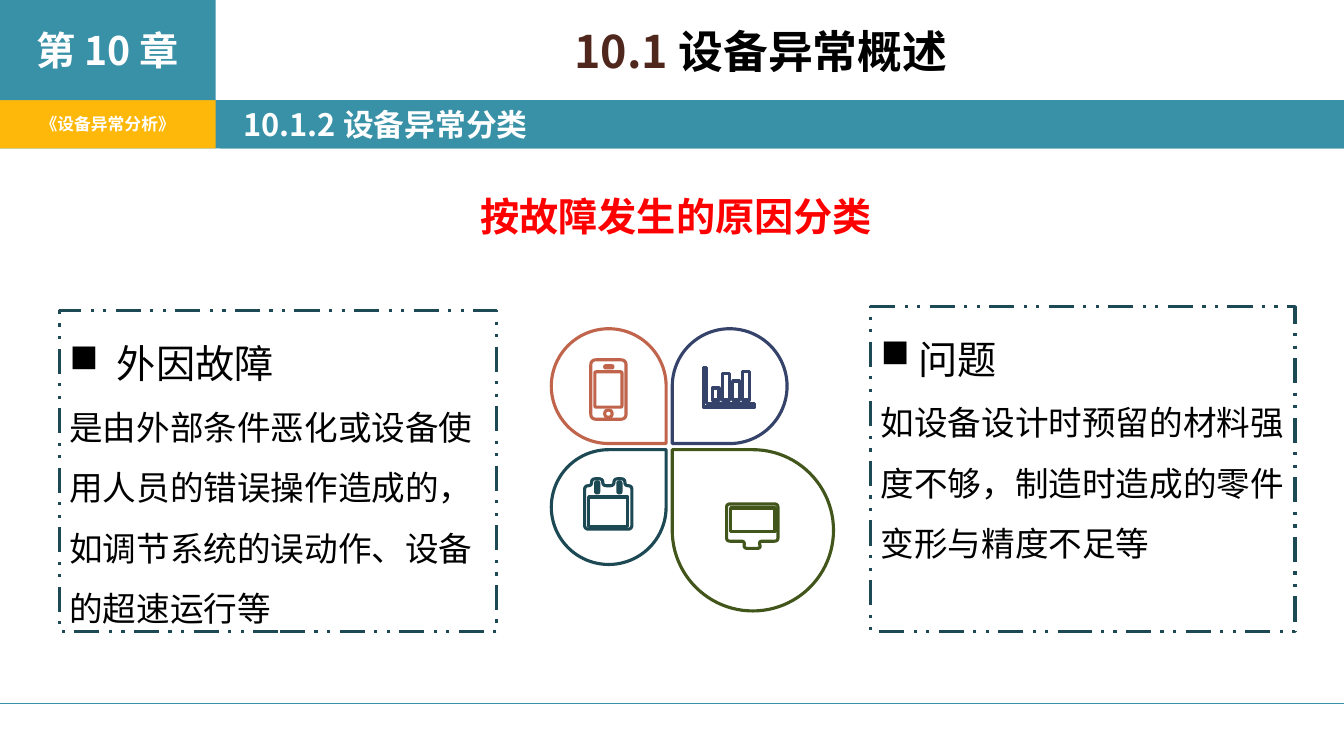
from pptx import Presentation
from pptx.dml.color import RGBColor
from pptx.enum.dml import MSO_LINE
from pptx.enum.shapes import MSO_CONNECTOR, MSO_SHAPE
from pptx.enum.text import MSO_ANCHOR, PP_ALIGN
from pptx.oxml.ns import qn
from pptx.util import Pt
from lxml import etree

RECT, TEARDROP = MSO_SHAPE.RECTANGLE, MSO_SHAPE.TEAR
STRAIGHT = MSO_CONNECTOR.STRAIGHT
DASH = MSO_LINE.DASH_DOT_DOT
TOP, MIDDLE = MSO_ANCHOR.TOP, MSO_ANCHOR.MIDDLE
LEFT, CENTER = PP_ALIGN.LEFT, PP_ALIGN.CENTER

WIDTH, HEIGHT = 960, 540
HEAD_FONT, BODY_FONT = "Noto Sans CJK SC", "Calibri"
COLORS = {
    "teal": "3891A7", "amber": "FEB80A", "brown": "4F271C", "red": "FF0000",
    "white": "FFFFFF", "black": "000000", "navy": "1C4954", "olive": "42551A",
    "indigo": "35436A", "rust": "C0654C",
}


def rgb(name):
    return RGBColor.from_string(COLORS[name])


def paint(sp, fill=None, line=None):
    sp.shadow.inherit = False
    if fill:
        sp.fill.solid()
        sp.fill.fore_color.rgb = rgb(fill)
    else:
        sp.fill.background()
    if line:
        sp.line.color.rgb = rgb(line)
        sp.line.width = Pt(2.25)
    else:
        sp.line.fill.background()


def add_box(s, box, fill=None, line=None, kind=RECT):
    sp = s.shapes.add_shape(kind, *map(Pt, box))
    paint(sp, fill, line)
    return sp


def style(p, size, color, font, bold=False, align=LEFT):
    p.alignment = align
    p.font.size, p.font.bold, p.font.name = Pt(size), bold, font
    p.font.color.rgb = rgb(color)


def write(sp, text, size, color, font=HEAD_FONT, align=CENTER, anchor=MIDDLE):
    tf = sp.text_frame
    tf.word_wrap, tf.vertical_anchor = True, anchor
    p = tf.paragraphs[0]
    p.text = text
    style(p, size, color, font, True, align)
    return tf


def add_text(s, box, *args, **kwargs):
    return write(s.shapes.add_textbox(*map(Pt, box)), *args, **kwargs)


def add_header(s, x, y, w, h):
    side, top = 154, 71.5
    band = h - top
    add_box(s, (x, y + top, w, band), "teal")
    add_box(s, (x, y + top, side, band), "amber")
    write(add_box(s, (x, y, side, top), "teal"), "第 10 章", 28, "white")
    add_text(s, (x, y + top, side, band), "《设备异常分析》", 12, "white")

    tf = add_text(s, (x + 166.5, y + 13.5, 754, 58), "", 32, "black", anchor=TOP)
    p = tf.paragraphs[0]
    r = p.add_run()
    r.text = "10.1 "
    r.font.color.rgb = rgb("brown")
    p.add_run().text = "设备异常概述"

    sp = add_box(s, (x + side + 3, y + top, w - side - 3, band), "teal")
    tf = write(sp, "10.1.2 设备异常分类", 22, "white", align=LEFT)
    tf.margin_left = Pt(17)


def add_footer(s, x, y, w):
    line = s.shapes.add_connector(STRAIGHT, Pt(x), Pt(y), Pt(x + w), Pt(y))
    line.line.color.rgb = rgb("teal")
    line.line.width = Pt(0.79)
    etree.SubElement(line._element.spPr, qn("a:effectLst"))


def add_cause(s, box, heading, detail, indent):
    sp = add_box(s, box, line="navy")
    sp.line.dash_style = DASH
    tf = sp.text_frame
    tf.word_wrap, tf.vertical_anchor = True, TOP
    title, body = tf.paragraphs[0], tf.add_paragraph()
    for p, text, size in ((title, heading, 28), (body, detail, 24)):
        p.text = text
        p.line_spacing = 1.5
        style(p, size, "black", BODY_FONT)
    pPr = title._p.get_or_add_pPr()
    pPr.set("marL", str(Pt(indent)))
    pPr.set("indent", str(-Pt(indent)))
    bullet = etree.Element(qn("a:buChar"), char="■")
    pPr.find(qn("a:defRPr")).addprevious(bullet)


def block(x, y, w, h, radius=0):
    return [(x, y), (x + w, y), (x + w, y + h), (x, y + h)], radius


def toward(a, b, distance):
    dx, dy = b[0] - a[0], b[1] - a[1]
    share = min(0.5, distance / (dx * dx + dy * dy) ** 0.5)
    return a[0] + dx * share, a[1] + dy * share


def rounded(corners, radius, steps=6):
    if not radius:
        return corners
    points = []
    for i, c in enumerate(corners):
        a = toward(c, corners[i - 1], radius)
        b = toward(c, corners[(i + 1) % len(corners)], radius)
        for k in range(steps + 1):
            t = k / steps
            points.append(tuple((1 - t) ** 2 * a[j] + 2 * t * (1 - t) * c[j]
                                + t * t * b[j] for j in (0, 1)))
    return points


def add_icon(s, x, y, contours, color):
    builder = None
    for corners, radius in contours:
        first, *rest = [(Pt(x + px), Pt(y + py)) for px, py in rounded(corners, radius)]
        if builder is None:
            builder = s.shapes.build_freeform(*first, scale=1.0)
        else:
            builder.move_to(*first)
        builder.add_line_segments(rest, close=True)
    paint(builder.convert_to_shape(), "white", color)


PHONE = [block(0, 0, 25.2, 42.5, 4), block(2.9, 8.6, 19.4, 25.2, 1),
         block(10, 4.3, 5.8, 1.5, 0.7), block(10, 36, 5.2, 5, 2.5)]
CHART = [([(0, 0), (2.2, 0), (2.2, 25.2), (36.7, 25.2), (36.7, 28), (0, 28)], 0)]
CHART += [block(6.5 + 7.2 * i, top, 4.7, 23 - top)
          for i, top in enumerate((14.4, 4.3, 9.4, 2.9))]
CALENDAR = [([(0, 5), (5, 5), (5, 0), (13, 0), (13, 5), (21, 5), (21, 0), (28.8, 0),
              (28.8, 5), (33.8, 5), (33.8, 36), (0, 36)], 3),
            block(2.9, 13, 28, 20.9)]
CALENDAR += [block(x, 2.2, 2.2, 7.9, 1) for x in (7.9, 23.8)]
MONITOR = [([(0, 0), (36.7, 0), (36.7, 26.6), (23, 26.6), (24.5, 31.7), (12.2, 31.7),
             (13, 26.6), (0, 26.6)], 2.5),
           block(2.9, 2.9, 31.7, 16.6)]


def add_petals(s, x, y):
    gap = 2.2
    petals = (
        (1, 1, 115.2, 270, "olive", MONITOR, (41, 41)),
        (1, 0, 82, 180, "indigo", CHART, (24.4, -56.2)),
        (0, 1, 82, 0, "navy", CALENDAR, (-60.4, 23)),
        (0, 0, 82, 90, "rust", PHONE, (-56, -62)),
    )
    for right, below, size, turn, color, icon, (dx, dy) in petals:
        left = x + gap if right else x - gap - size
        top = y + gap if below else y - gap - size
        sp = add_box(s, (left, top, size, size), "white", color, TEARDROP)
        sp.rotation = turn
        tint = sp._element.spPr.find(qn("a:solidFill"))[0]
        etree.SubElement(tint, qn("a:alpha"), val="30000")
        add_icon(s, x + dx, y + dy, icon, color)


def main():
    prs = Presentation()
    prs.slide_width, prs.slide_height = Pt(WIDTH), Pt(HEIGHT)
    s = prs.slides.add_slide(prs.slide_layouts[6])
    add_header(s, 0, 0, WIDTH, 106)
    add_footer(s, 0, 502.5, WIDTH)
    add_text(s, (332, 134, 302, 41), "按故障发生的原因分类", 28, "red", BODY_FONT, anchor=TOP)
    add_cause(s, (42.5, 222, 312.5, 229), "外因故障",
              "是由外部条件恶化或设备使用人员的错误操作造成的，如调节系统的误动作、设备的超速运行等", 34)
    add_cause(s, (622, 219, 303, 232), "问题",
              "如设备设计时预留的材料强度不够，制造时造成的零件变形与精度不足等", 27)
    add_petals(s, 478, 319)
    prs.save("out.pptx")


if __name__ == "__main__":
    main()
